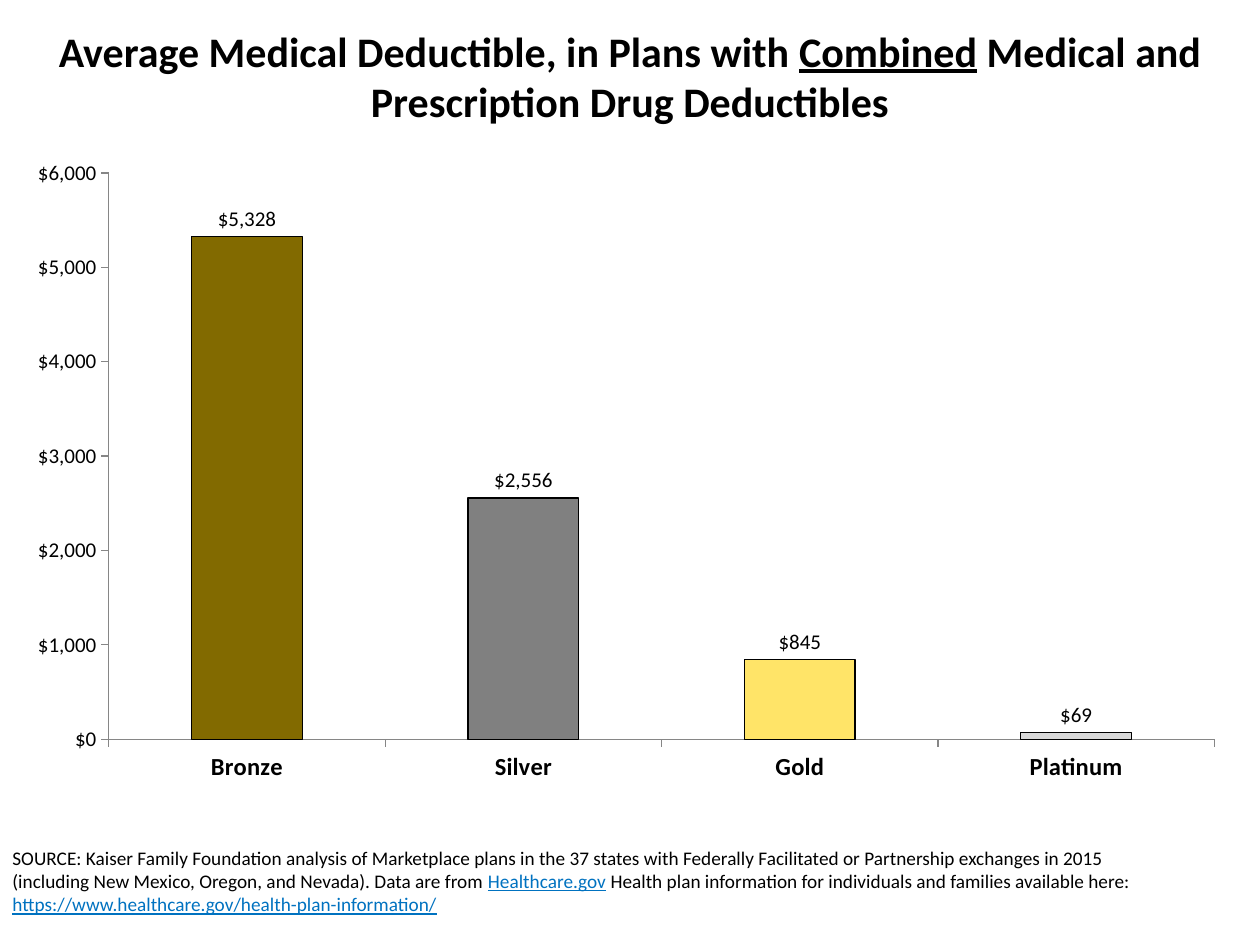
from typing import NamedTuple

from lxml import etree
from pptx import Presentation
from pptx import util as u
from pptx.chart import data
from pptx.dml import color
from pptx.enum import chart as ch, text
from pptx.oxml import ns

HUES = {
    "ink": "000000",
    "link": "0072C0",
    "axis": "868686",
    "bronze": "826A00",
    "silver": "808080",
    "gold": "FFE468",
    "plat": "D9D9D9",
}
FACE = "Calibri"
MONEY = '"$"#,##0'


class Box(NamedTuple):
    left: float
    top: float
    width: float
    height: float

    def pts(self) -> list:
        return [u.Pt(n) for n in self]


class Run(NamedTuple):
    words: str
    hue: str = "ink"
    under: bool = False


class Bar(NamedTuple):
    tier: str
    cost: int
    hue: str


TITLE = [
    Run("Average Medical Deductible, in Plans with "),
    Run("Combined", under=True),
    Run(" Medical and Prescription Drug Deductibles"),
]
SOURCE = [
    Run("SOURCE: Kaiser Family Foundation analysis of Marketplace plans in the 37 states "
        "with Federally Facilitated or Partnership exchanges in 2015 (including New Mexico, "
        "Oregon, and Nevada). Data are from "),
    Run("Healthcare.gov", "link", True),
    Run(" Health plan information for individuals and families available here: "),
    Run("https://www.healthcare.gov/health-plan-information/", "link", True),
]
BARS = [
    Bar("Bronze", 5328, "bronze"),
    Bar("Silver", 2556, "silver"),
    Bar("Gold", 845, "gold"),
    Bar("Platinum", 69, "plat"),
]


def rgb(hue: str) -> color.RGBColor:
    return color.RGBColor.from_string(HUES[hue])


def style(font, size: float, bold: bool = False) -> None:
    font.name = FACE
    font.size = u.Pt(size)
    font.bold = bold


def write(slide, box: Box, runs: list[Run], size: float, bold: bool = False,
          align=text.PP_ALIGN.LEFT, anchor=text.MSO_ANCHOR.TOP) -> None:
    frame = slide.shapes.add_textbox(*box.pts()).text_frame
    frame.word_wrap = True
    frame.vertical_anchor = anchor
    para = frame.paragraphs[0]
    para.alignment = align
    style(para.font, size, bold)
    for item in runs:
        run = para.add_run()
        run.text = item.words
        run.font.color.rgb = rgb(item.hue)
        run.font.underline = item.under


def place(chart, box: Box) -> None:
    area = chart.plots[0]._element.getparent()
    for old in area.findall(ns.qn("c:layout")):
        area.remove(old)
    layout = etree.Element(ns.qn("c:layout"))
    manual = etree.SubElement(layout, ns.qn("c:manualLayout"))
    rules = [("layoutTarget", "inner"), ("xMode", "edge"), ("yMode", "edge")]
    for tag, val in rules + list(zip("xywh", box)):
        etree.SubElement(manual, ns.qn(f"c:{tag}")).set("val", str(val))
    area.insert(0, layout)


def trim(axis, size: float, bold: bool = False) -> None:
    axis.has_major_gridlines = False
    axis.major_tick_mark = ch.XL_TICK_MARK.OUTSIDE
    axis.minor_tick_mark = ch.XL_TICK_MARK.NONE
    axis.format.line.color.rgb = rgb("axis")
    axis.format.line.width = u.Pt(0.75)
    style(axis.tick_labels.font, size, bold)
    axis.tick_labels.font.color.rgb = rgb("ink")


def plot(slide, box: Box, bars: list[Bar]) -> None:
    info = data.CategoryChartData(number_format=MONEY)
    info.categories = [bar.tier for bar in bars]
    info.add_series("Series 1", [bar.cost for bar in bars])
    chart = slide.shapes.add_chart(
        ch.XL_CHART_TYPE.COLUMN_CLUSTERED, *box.pts(), info).chart
    chart.has_legend = False
    chart.has_title = False
    style(chart.font, 18)
    chart.font.color.rgb = rgb("ink")
    place(chart, Box(0.08, 0.04, 0.9, 0.87))

    trim(chart.category_axis, 14, True)
    costs = chart.value_axis
    trim(costs, 12)
    costs.minimum_scale, costs.maximum_scale, costs.major_unit = 0, 6000, 1000
    costs.tick_labels.number_format = MONEY
    costs.tick_labels.number_format_is_linked = False

    group = chart.plots[0]
    group.gap_width = 150
    group.vary_by_categories = False
    group.has_data_labels = True
    labels = group.data_labels
    labels.show_value = True
    labels.position = ch.XL_LABEL_POSITION.OUTSIDE_END
    labels.number_format = MONEY
    labels.number_format_is_linked = False
    style(labels.font, 12)
    labels.font.color.rgb = rgb("ink")
    for i, bar in enumerate(bars):
        look = group.series[0].points[i].format
        look.fill.solid()
        look.fill.fore_color.rgb = rgb(bar.hue)
        look.line.color.rgb = rgb("ink")
        look.line.width = u.Pt(0.75)


def main() -> None:
    deck = Presentation()
    deck.slide_width, deck.slide_height = u.Pt(720), u.Pt(540)
    slide = deck.slides.add_slide(deck.slide_layouts[6])
    write(slide, Box(0, 480, 666, 60), SOURCE, 11)
    write(slide, Box(7.2, 7.2, 705.6, 72), TITLE, 24, True,
          text.PP_ALIGN.CENTER, text.MSO_ANCHOR.MIDDLE)
    plot(slide, Box(6, 84, 702, 372), BARS)
    deck.save("out.pptx")


if __name__ == "__main__":
    main()
